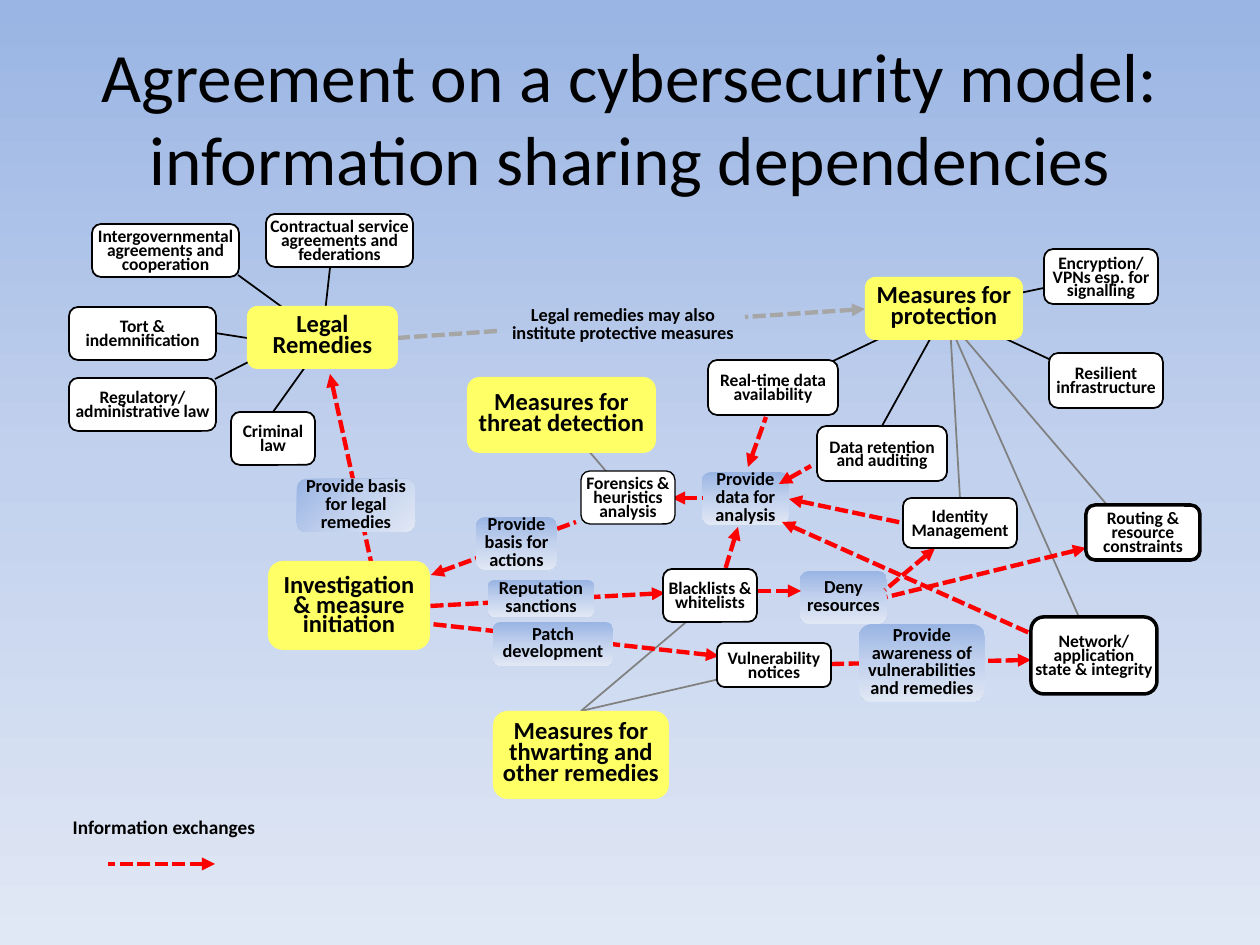
import copy

import pptx
import pptx.dml.color
import pptx.enum.dml
import pptx.enum.shapes
import pptx.enum.text
import pptx.oxml.ns
import pptx.oxml.xmlchemy
import pptx.util
from lxml import etree

PX = 914400 / 126
FONT = "Calibri"
COLORS = {
    "text": "000000", "hub": "FFFF66", "note": "FFFFFF", "outline": "000000",
    "black": "000000", "gray": "808080", "exchange": "FF0000", "optional": "A6A6A6",
}
GRADIENT = ((0, "9AB5E4"), (0.5, "C2D1ED"), (1, "E1E8F5"))
# Box styles: font size, line spacing in points, top inset in px
STYLES = {"hub": (14, 12, 0), "note": (10, 8, 6), "label": (10.5, 10, 0)}

# Boxes: text, left, top, width, height
HUBS = [
    ("Measures for protection", 865, 277, 158, 63),
    ("Measures for threat detection", 467, 377, 189, 76),
    ("Measures for thwarting and other remedies", 493, 711, 176, 88),
    ("Legal Remedies", 247, 306, 151, 63),
]
# Notes end with their outline width in points
NOTES = [
    ("Contractual service agreements and federations", 266, 214, 147, 53, 1),
    ("Intergovernmental agreements and cooperation", 92, 224, 147, 53, 1),
    ("Tort & indemnification", 69, 307, 147, 53, 1),
    ("Regulatory/ administrative law", 69, 378, 147, 53, 1),
    ("Criminal law", 231, 412, 84, 53, 1),
    ("Data retention and auditing", 817, 426, 130, 55, 1),
    ("Identity Management", 903, 498, 114, 50, 1),
    ("Forensics & heuristics analysis", 581, 471, 94, 53, 0.75),
    ("Encryption/ VPNs esp. for signalling", 1044, 249, 114, 55, 1),
    ("Resilient infrastructure", 1049, 353, 114, 55, 1),
    ("Routing & resource constraints", 1086, 505, 114, 55, 2),
    ("Network/ application state & integrity", 1031, 617, 126, 77, 2),
    ("Real-time data availability", 708, 360, 130, 55, 1),
    ("Blacklists & whitelists", 663, 569, 94, 53, 1),
    ("Vulnerability notices", 717, 643, 114, 44, 1),
]
LABELS_BELOW = [
    ("Deny resources", 800, 571, 87, 53),
    ("Provide data for analysis", 702, 472, 87, 53),
]
LABELS_ABOVE = [
    ("Patch development", 493, 622, 120, 44),
    ("Provide basis for actions", 476, 517, 81, 53),
    ("Reputation sanctions", 488, 580, 106, 37),
    ("Provide awareness of vulnerabilities and remedies", 859, 624, 126, 78),
]

# Lines: x1, y1, x2, y2; arrowheads sit at the first point
BLACK_LINKS = [
    (323, 331, 330, 268), (315, 331, 238, 275), (247, 338, 215, 333),
    (315, 328, 215, 379), (328, 335, 273, 412), (882, 426, 944, 314),
    (1096, 277, 944, 309), (1096, 381, 942, 309), (827, 364, 937, 311),
]
GRAY_LINKS = [
    (960, 498, 949, 307), (629, 498, 558, 415), (1143, 547, 942, 312),
    (1094, 651, 944, 312), (717, 596, 581, 711), (772, 667, 581, 711),
]
EXCHANGES = [
    (672, 498, 702, 498), (330, 374, 373, 571), (801, 591, 756, 591),
    (935, 548, 885, 590), (1086, 548, 887, 597), (665, 593, 430, 606),
    (431, 575, 576, 522), (1031, 660, 832, 664), (782, 522, 1043, 639),
    (789, 499, 903, 523), (748, 467, 766, 417), (779, 484, 811, 466),
    (738, 527, 725, 570), (719, 656, 431, 624), (215, 864, 108, 864),
]


def px(n):
    return pptx.util.Emu(round(n * PX))


def rgb(name):
    return pptx.dml.color.RGBColor.from_string(COLORS[name])


def set_gradient(fill, element, angle):
    fill.gradient()
    fill.gradient_angle = angle
    stops = element.find(".//" + pptx.oxml.ns.qn("a:gsLst"))
    stops.insert(1, copy.deepcopy(stops[0]))
    for stop, (position, color) in zip(fill.gradient_stops, GRADIENT):
        stop.position = position
        stop.color.rgb = pptx.dml.color.RGBColor.from_string(color)


def set_text(tf, text, size, spacing=None):
    tf.text = text
    tf.word_wrap = True
    p = tf.paragraphs[0]
    p.alignment = pptx.enum.text.PP_ALIGN.CENTER
    if spacing:
        p.line_spacing = pptx.util.Pt(spacing)
    for r in p.runs:
        r.font.name = FONT
        r.font.size = pptx.util.Pt(size)
        r.font.color.rgb = rgb("text")
        r.font.bold = spacing is not None


def add_box(s, style, text, x, y, w, h, spacing=None, top=None):
    size, style_spacing, style_top = STYLES[style]
    sp = s.shapes.add_shape(pptx.enum.shapes.MSO_SHAPE.ROUNDED_RECTANGLE,
                            px(x), px(y), px(w), px(h))
    sp.shadow.inherit = False
    sp.fill.background()
    sp.line.fill.background()
    tf = sp.text_frame
    set_text(tf, text, size, spacing or style_spacing)
    tf.vertical_anchor = pptx.enum.text.MSO_ANCHOR.MIDDLE
    tf.margin_left = tf.margin_right = tf.margin_bottom = 0
    tf.margin_top = px(style_top if top is None else top)
    return sp


def add_hub(s, *box, **options):
    sp = add_box(s, "hub", *box, **options)
    sp.fill.solid()
    sp.fill.fore_color.rgb = rgb("hub")


def add_note(s, *box):
    *place, outline = box
    sp = add_box(s, "note", *place)
    sp.fill.solid()
    sp.fill.fore_color.rgb = rgb("note")
    sp.line.color.rgb = rgb("outline")
    sp.line.width = pptx.util.Pt(outline)


def add_label(s, *box, angle=270):
    sp = add_box(s, "label", *box)
    set_gradient(sp.fill, sp.element, angle)


def add_line(s, color, points, dashed=False, arrow=False):
    line = s.shapes.add_connector(pptx.enum.shapes.MSO_CONNECTOR.STRAIGHT,
                                  *(px(n) for n in points))
    line.line.color.rgb = rgb(color)
    line.line.width = pptx.util.Pt(2.5 if dashed else 1)
    if dashed:
        line.line.dash_style = pptx.enum.dml.MSO_LINE.SQUARE_DOT
    qn = pptx.oxml.ns.qn
    sp_pr = line.element.find(qn("p:spPr"))
    if arrow:
        etree.SubElement(sp_pr.find(qn("a:ln")), qn("a:headEnd"), type="triangle")
    etree.SubElement(sp_pr, qn("a:effectLst"))


def add_text(s, text, x, y, w, h, size, spacing=None):
    tf = s.shapes.add_textbox(px(x), px(y), px(w), px(h)).text_frame
    set_text(tf, text, size, spacing)
    return tf


def main():
    prs = pptx.Presentation()
    prs.slide_width, prs.slide_height = px(1260), px(945)
    s = prs.slides.add_slide(prs.slide_layouts[6])
    set_gradient(s.background.fill, s.element, 270)

    # Labels that arrowheads overlap
    for label in LABELS_BELOW:
        add_label(s, *label)

    # Links and information exchanges
    for points in BLACK_LINKS:
        add_line(s, "black", points)
    for points in GRAY_LINKS:
        add_line(s, "gray", points)
    for points in EXCHANGES:
        add_line(s, "exchange", points, dashed=True, arrow=True)

    # Optional path from legal remedies to protection
    add_line(s, "optional", (865, 309, 745, 317), dashed=True, arrow=True)
    add_line(s, "optional", (497, 331, 397, 338), dashed=True)
    add_box(s, "label", "Legal remedies may also institute protective measures",
            508, 299, 230, 53)

    # Notes, hubs and the labels over the arrows
    for note in NOTES:
        add_note(s, *note)
    for hub in HUBS:
        add_hub(s, *hub)
    add_hub(s, "Investigation & measure initiation", 268, 561, 162, 89,
            spacing=11, top=6)
    for label in LABELS_ABOVE:
        add_label(s, *label)
    add_label(s, "Provide basis for legal remedies", 297, 479, 118, 53, angle=315)

    # Title and legend
    title = add_text(
        s, "Agreement on a cybersecurity model:\vinformation sharing dependencies",
        63, 38, 1134, 157, 39.6)
    title.vertical_anchor = pptx.enum.text.MSO_ANCHOR.MIDDLE
    legend = add_text(s, "Information exchanges", 59, 809, 210, 36, 11, 13.2)
    legend.paragraphs[0].line_spacing = 1.0

    prs.save("out.pptx")


if __name__ == "__main__":
    main()
